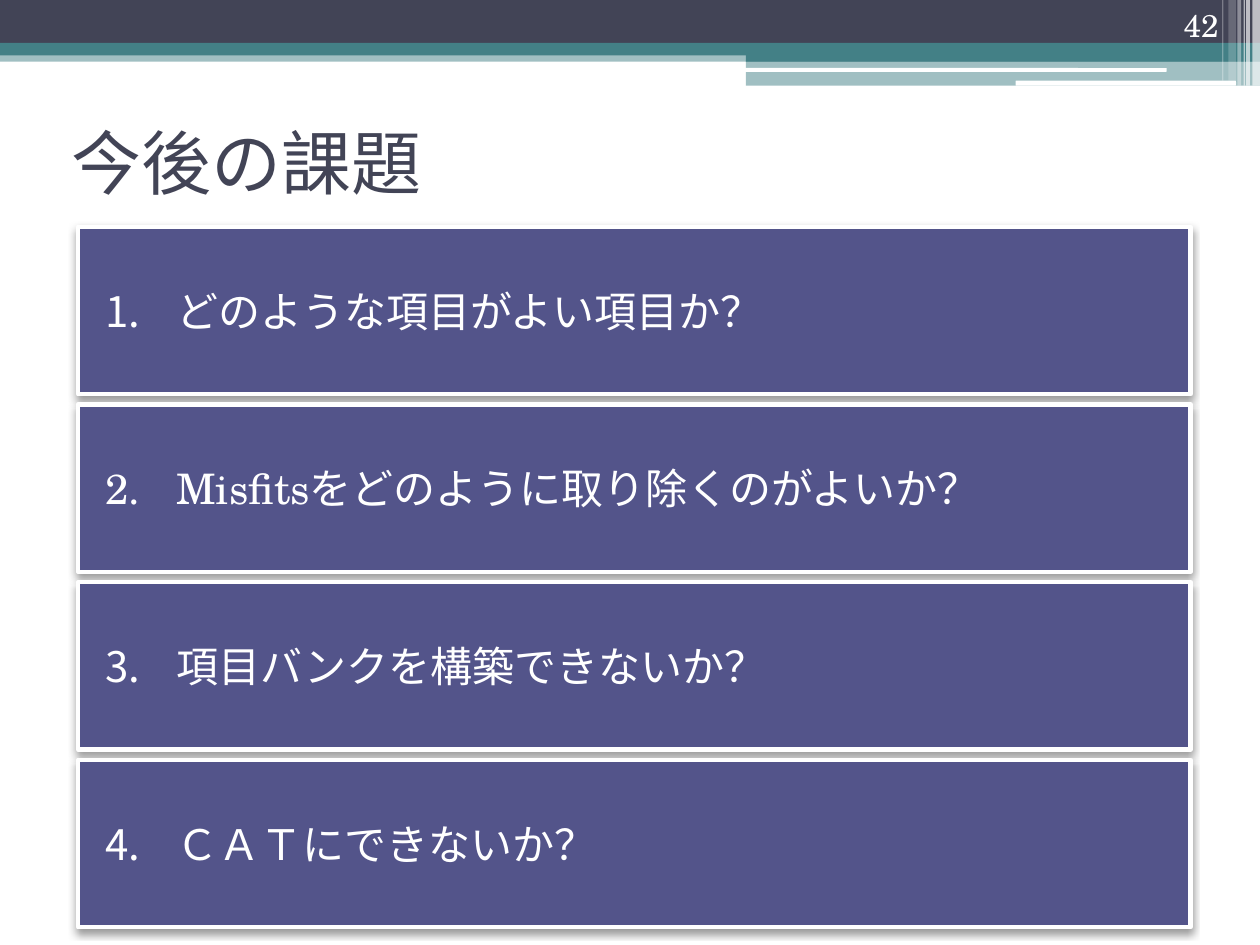
from lxml.etree import SubElement
from pptx import Presentation
from pptx.dml.color import RGBColor
from pptx.enum.shapes import MSO_SHAPE as Shape
from pptx.enum.text import MSO_ANCHOR as Anchor, PP_ALIGN as Align
from pptx.oxml.ns import qn
from pptx.util import Inches, Pt

NAVY = RGBColor(0x42, 0x44, 0x56)
TEAL = RGBColor(0x43, 0x80, 0x86)
PURPLE = RGBColor(0x53, 0x54, 0x8A)
WHITE = RGBColor(0xFF, 0xFF, 0xFF)
HEAD_FONT, BODY_FONT = "Lato", "TeX Gyre Schola"

# Content
TITLE = "今後の課題"
PAGE_NUMBER = "42"
ISSUES = [
    "どのような項目がよい項目か？",
    "Misfitsをどのように取り除くのがよいか？",
    "項目バンクを構築できないか？",
    "ＣＡＴにできないか？",
]

# Header bands: left, top, width, height, colour, opacity in percent
BANDS = [
    (0, 0.4, 10, 0.09, TEAL, 50),
    (0, 0, 10, 0.34, NAVY, 100),
    (0, 0.34, 10, 0.1, TEAL, 100),
    (5.92, 0.39, 4.08, 0.1, TEAL, 100),
    (5.92, 0.48, 4.08, 0.2, TEAL, 50),
]
# White rules: left, top, width, height
RULES = [(5.91, 0.54, 3.35, 0.03), (8.06, 0.64, 1.75, 0.04)]
# Vertical stripes: left, width, height, opacity in percent
STRIPES = [
    (9.94, 0.06, 0.68, 65),
    (9.89, 0.03, 0.68, 65),
    (9.87, 0.01, 0.68, 60),
    (9.82, 0.03, 0.68, 40),
    (9.75, 0.06, 0.64, 20),
    (9.7, 0.01, 0.64, 30),
]

# Issue panels
PANEL_LEFT, PANEL_TOP, PANEL_WIDTH, PANEL_HEIGHT = 0.62, 1.8, 8.83, 1.33
PANEL_STEP = 1.41


def add_block(page, kind, left, top, width, height, colour, opacity=100):
    block = page.shapes.add_shape(
        kind, Inches(left), Inches(top), Inches(width), Inches(height))
    block.shadow.inherit = False
    block.fill.solid()
    block.fill.fore_color.rgb = colour
    block.line.fill.background()
    if opacity < 100:
        tint = block.fill._xPr.find(qn("a:solidFill"))[0]
        SubElement(tint, qn("a:alpha"), val=str(opacity * 1000))
    return block


def write(para, text, size, font, colour):
    span = para.add_run()
    span.text = text
    span.font.size = Pt(size)
    span.font.name = font
    span.font.color.rgb = colour


def add_shadow(block):
    effects = block._element.spPr.find(qn("a:effectLst"))
    shadow = SubElement(
        effects, qn("a:outerShdw"), blurRad=str(Pt(4.1)), dist=str(Pt(2)),
        dir="5400000", algn="ctr", rotWithShape="0")
    tint = SubElement(shadow, qn("a:srgbClr"), val="000000")
    SubElement(tint, qn("a:alpha"), val="40000")


def number_paragraph(para, start):
    props = para._p.get_or_add_pPr()
    props.set("marL", str(Inches(0.68)))
    props.set("indent", str(Inches(-0.56)))
    SubElement(props, qn("a:buFont"), typeface="+mj-lt")
    SubElement(props, qn("a:buAutoNum"), type="arabicPeriod", startAt=str(start))


def add_issue(page, index, text):
    panel = add_block(page, Shape.RECTANGLE, PANEL_LEFT,
                      PANEL_TOP + index * PANEL_STEP,
                      PANEL_WIDTH, PANEL_HEIGHT, PURPLE)
    panel.line.color.rgb = WHITE
    panel.line.width = Pt(2.5)
    add_shadow(panel)
    frame = panel.text_frame
    frame.word_wrap = True
    frame.vertical_anchor = Anchor.MIDDLE
    para = frame.paragraphs[0]
    para.alignment = Align.LEFT
    number_paragraph(para, index + 1)
    write(para, text, 24, BODY_FONT, WHITE)


def main():
    deck = Presentation()
    deck.slide_width, deck.slide_height = Inches(10), Inches(7.5)
    page = deck.slides.add_slide(deck.slide_layouts[5])

    # Header decoration
    for band in BANDS:
        add_block(page, Shape.RECTANGLE, *band)
    for rule in RULES:
        add_block(page, Shape.ROUNDED_RECTANGLE, *rule, WHITE)
    for left, width, height, opacity in STRIPES:
        add_block(page, Shape.RECTANGLE, left, 0, width, height, WHITE, opacity)

    # Title
    title = page.shapes.title
    title.left, title.top = Inches(0.47), Inches(0.7)
    title.width, title.height = Inches(9), Inches(1.17)
    title.text_frame.vertical_anchor = Anchor.MIDDLE
    para = title.text_frame.paragraphs[0]
    para.alignment = Align.LEFT
    write(para, TITLE, 40, HEAD_FONT, NAVY)

    # Page number
    box = page.shapes.add_textbox(
        Inches(8.94), Inches(0), Inches(0.83), Inches(0.4))
    box.text_frame.word_wrap = True
    box.text_frame.vertical_anchor = Anchor.BOTTOM
    para = box.text_frame.paragraphs[0]
    para.alignment = Align.RIGHT
    write(para, PAGE_NUMBER, 18, BODY_FONT, WHITE)

    # Numbered issues
    for index, text in enumerate(ISSUES):
        add_issue(page, index, text)

    deck.save("out.pptx")


if __name__ == "__main__":
    main()
